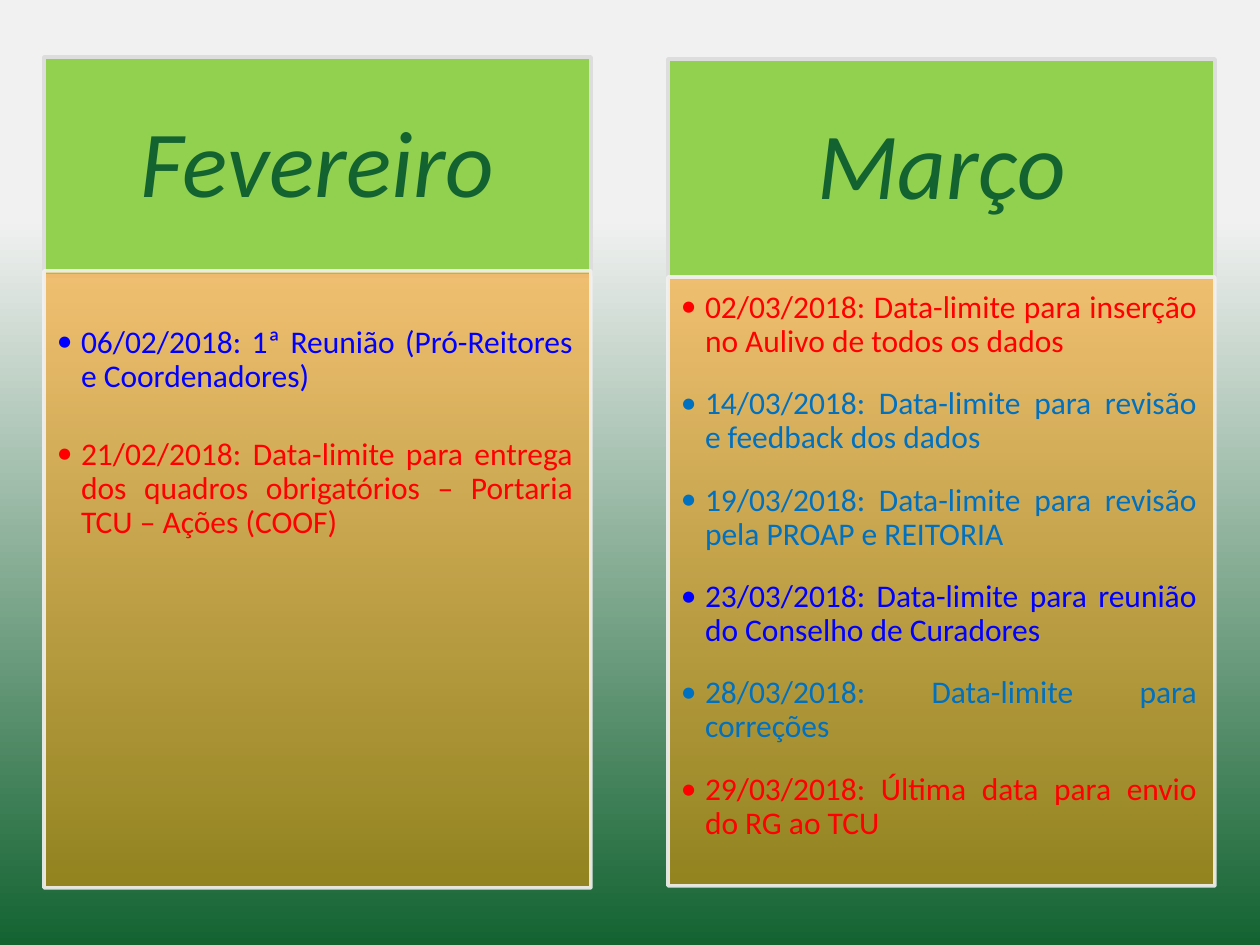
import pptx
import pptx.dml.color
import pptx.enum.shapes
import pptx.enum.text
import pptx.oxml
import pptx.oxml.ns
import pptx.util

RGB = pptx.dml.color.RGBColor
ALIGN = pptx.enum.text.PP_ALIGN
ANCHOR = pptx.enum.text.MSO_ANCHOR

PALE = RGB(0xF1, 0xF1, 0xF1)
GREEN = RGB(0x13, 0x63, 0x31)
LIME = RGB(0x92, 0xD0, 0x50)
ORANGE = RGB(0xFF, 0x99, 0x00)
HEADER_EDGE = RGB(0xDD, 0xDD, 0xDD)
BODY_EDGE = RGB(0xF2, 0xF2, 0xF2)
BLUE = RGB(0x00, 0x00, 0xFF)
RED = RGB(0xFF, 0x00, 0x00)
SKY = RGB(0x00, 0x70, 0xC0)

MONTHS = [
    {"name": "Fevereiro", "left": 44, "header": (57, 219), "body": (271, 617),
     "text_top": 55, "gap": 25, "deadlines": [
         ("06/02/2018: 1ª Reunião (Pró-Reitores e Coordenadores)", BLUE),
         ("21/02/2018: Data-limite para entrega dos quadros obrigatórios "
          "– Portaria TCU – Ações (COOF)", RED)]},
    {"name": "Março", "left": 668, "header": (59, 219), "body": (277, 609),
     "text_top": 14, "gap": 16.2, "deadlines": [
         ("02/03/2018: Data-limite para inserção no Aulivo de todos os dados", RED),
         ("14/03/2018: Data-limite para revisão e feedback dos dados", SKY),
         ("19/03/2018: Data-limite para revisão pela PROAP e REITORIA", SKY),
         ("23/03/2018: Data-limite para reunião do Conselho de Curadores", BLUE),
         ("28/03/2018: Data-limite para correções", SKY),
         ("29/03/2018: Última data para envio do RG ao TCU", RED)]},
]
COLUMN_WIDTH = 547
HANGING = 24
TITLE_FONT = {"name": "Calibri", "size": pptx.util.Pt(54), "italic": True}
DEADLINE_FONT = {"name": "Calibri", "size": pptx.util.Pt(18)}


def px(length):
    return pptx.util.Emu(length * 914400 // 126)


def set_all(target, values):
    for key, value in values.items():
        setattr(target, key, value)


def set_alpha(fill, percent):
    color = fill._xPr.find(".//" + pptx.oxml.ns.qn("a:srgbClr"))
    color.append(pptx.oxml.parse_xml(
        f'<a:alpha {pptx.oxml.ns.nsdecls("a")} val="{percent * 1000}"/>'))


def add_panel(slide, left, top, height, fill, edge, insets, anchor):
    panel = slide.shapes.add_shape(
        pptx.enum.shapes.MSO_SHAPE.RECTANGLE,
        px(left), px(top), px(COLUMN_WIDTH), px(height))
    panel.shadow.inherit = False
    panel.fill.solid()
    panel.fill.fore_color.rgb = fill
    panel.line.color.rgb = edge
    panel.line.width = pptx.util.Pt(2)
    sides = ("margin_left", "margin_top", "margin_right", "margin_bottom")
    set_all(panel.text_frame, dict(zip(sides, map(px, insets))))
    set_all(panel.text_frame, {"word_wrap": True, "vertical_anchor": anchor})
    return panel


def write(paragraph, text, color, font, align):
    run = paragraph.add_run()
    run.text = text
    set_all(run.font, font)
    run.font.color.rgb = color
    set_all(paragraph, {"alignment": align, "line_spacing": 0.9})


def add_bullet(paragraph):
    properties = paragraph._p.get_or_add_pPr()
    properties.set("marL", str(px(HANGING)))
    properties.set("indent", str(-px(HANGING)))
    for element in ('buFont {} typeface="Calibri"', 'buChar {} char="•"'):
        tag = element.format(pptx.oxml.ns.nsdecls("a"))
        properties.append(pptx.oxml.parse_xml(f"<a:{tag}/>"))


def add_month(slide, month):
    header = add_panel(slide, month["left"], *month["header"], LIME, HEADER_EDGE,
                       (53, 30, 53, 30), ANCHOR.MIDDLE)
    write(header.text_frame.paragraphs[0], month["name"], GREEN, TITLE_FONT, ALIGN.CENTER)

    body = add_panel(slide, month["left"], *month["body"], ORANGE, BODY_EDGE,
                     (13, month["text_top"], 18, 20), ANCHOR.TOP)
    set_alpha(body.fill, 50)
    set_alpha(body.line.fill, 90)
    frame = body.text_frame
    for index, (deadline, color) in enumerate(month["deadlines"]):
        paragraph = frame.add_paragraph() if index else frame.paragraphs[0]
        write(paragraph, deadline, color, DEADLINE_FONT, ALIGN.JUSTIFY)
        if index:
            paragraph.space_before = pptx.util.Pt(month["gap"])
        add_bullet(paragraph)


def main():
    deck = pptx.Presentation()
    set_all(deck, {"slide_width": px(1260), "slide_height": px(945)})
    slide = deck.slides.add_slide(deck.slide_layouts[6])
    backdrop = slide.background.fill
    backdrop.gradient()
    backdrop.gradient_angle = 270
    for stop, (position, color) in zip(backdrop.gradient_stops, [(0.23, PALE), (1, GREEN)]):
        stop.position = position
        stop.color.rgb = color
    for month in MONTHS:
        add_month(slide, month)
    deck.save("out.pptx")


if __name__ == "__main__":
    main()
